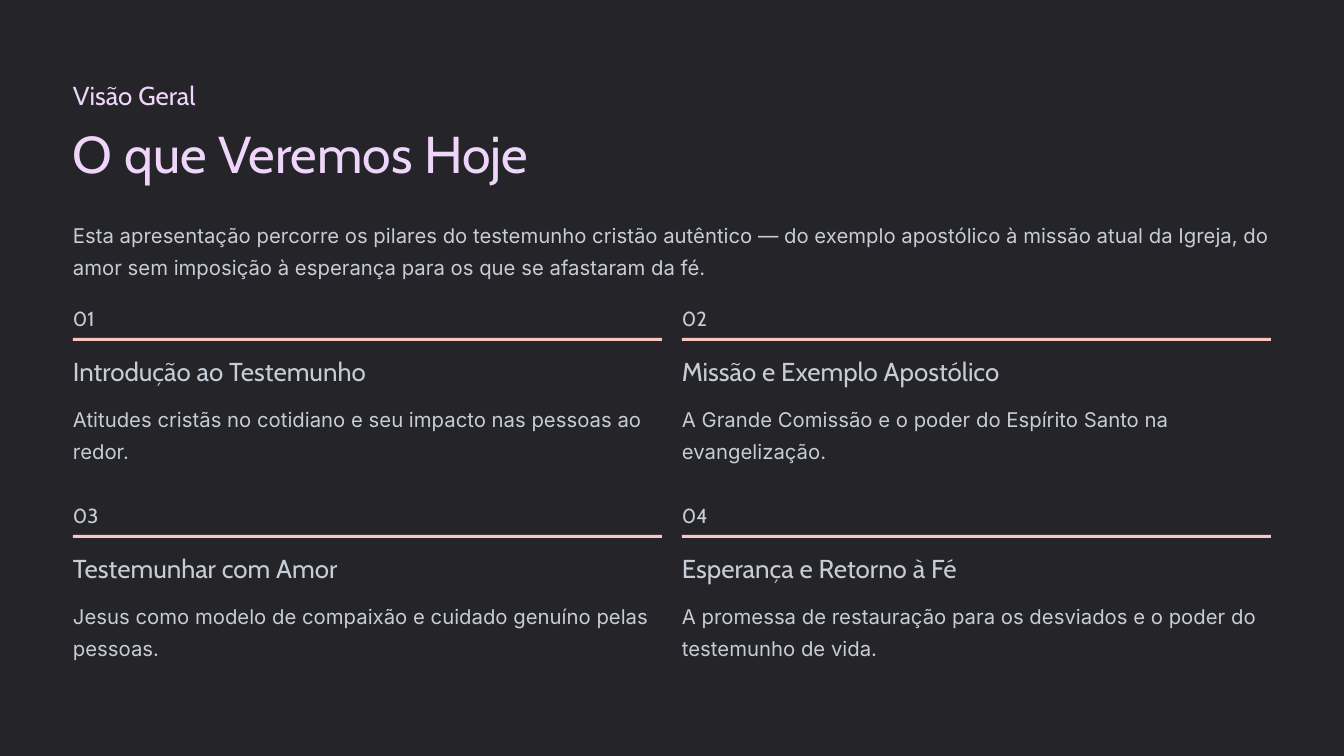
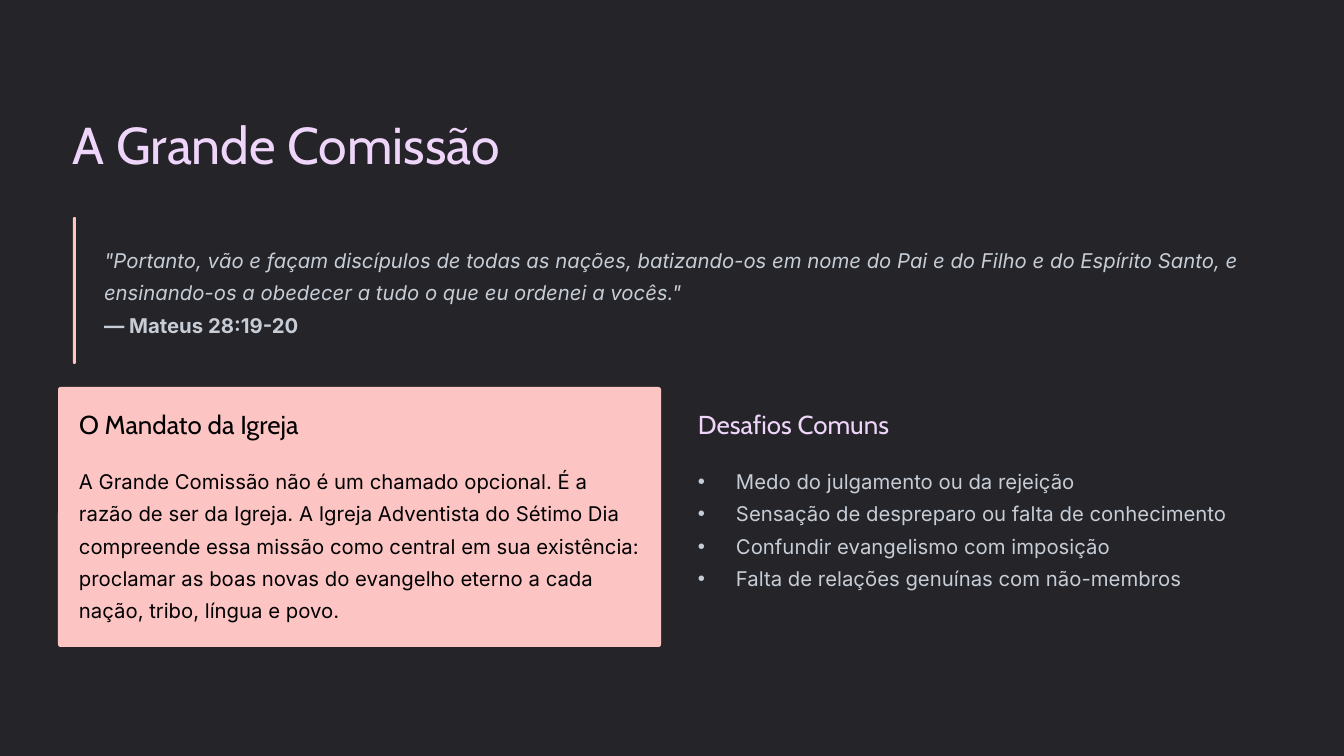
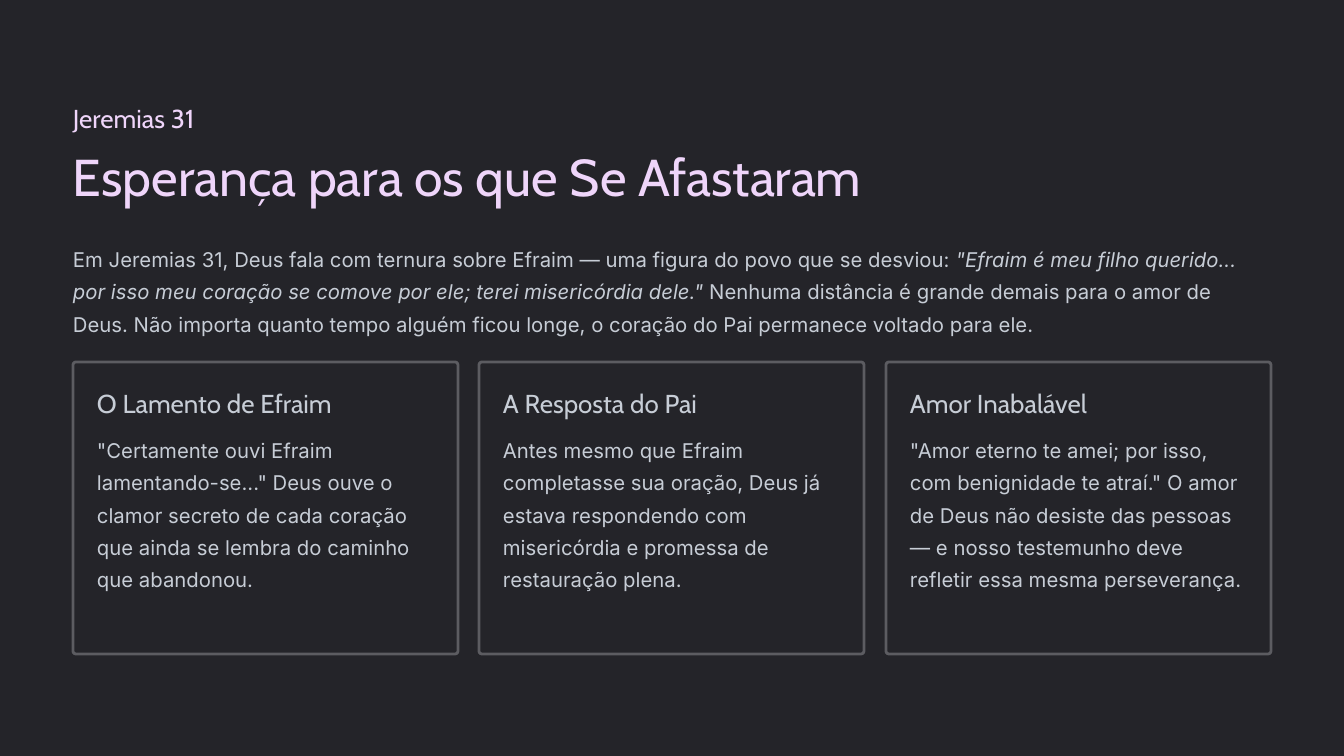
from lxml.etree import SubElement
from pptx import Presentation
from pptx.dml.color import RGBColor
from pptx.enum.shapes import MSO_SHAPE as Preset
from pptx.enum.text import MSO_ANCHOR as Anchor, MSO_AUTO_SIZE as AutoSize, PP_ALIGN as Align
from pptx.oxml.ns import qn
from pptx.util import Pt

PX = 914400 / 100.8
WIDTH, HEIGHT = 1344, 756
LEFT, CONTENT_WIDTH = 73, 1198

# Shared look
BACKGROUND, LILAC, GREY = "242429", "EFD5FA", "C7CDD6"
PINK, OUTLINE, BLACK = "FDC4C4", "5C5C61", "000000"
TITLE = ("Cabin", 37, 1.04)
HEADING = ("Cabin", 18.5, 1.04)
BODY = ("Inter", 14.5, 1.33)
NUMBER = ("Cabin", 14.5, 1.0)

TITLE_AND_BODY, TITLE_ONLY = 1, 5

TOPICS = [
    ("Introdução ao Testemunho",
     "Atitudes cristãs no cotidiano e seu impacto nas pessoas ao redor."),
    ("Missão e Exemplo Apostólico",
     "A Grande Comissão e o poder do Espírito Santo na evangelização."),
    ("Testemunhar com Amor",
     "Jesus como modelo de compaixão e cuidado genuíno pelas pessoas."),
    ("Esperança e Retorno à Fé",
     "A promessa de restauração para os desviados e o poder do testemunho de vida."),
]
CHALLENGES = [
    "Medo do julgamento ou da rejeição",
    "Sensação de despreparo ou falta de conhecimento",
    "Confundir evangelismo com imposição",
    "Falta de relações genuínas com não-membros",
]
CARDS = [
    ("O Lamento de Efraim",
     '"Certamente ouvi Efraim lamentando-se..." Deus ouve o clamor secreto de cada '
     "coração que ainda se lembra do caminho que abandonou."),
    ("A Resposta do Pai",
     "Antes mesmo que Efraim completasse sua oração, Deus já estava respondendo com "
     "misericórdia e promessa de restauração plena."),
    ("Amor Inabalável",
     '"Amor eterno te amei; por isso, com benignidade te atraí." O amor de Deus não '
     "desiste das pessoas — e nosso testemunho deve refletir essa mesma perseverança."),
]


def px(value):
    return round(value * PX)


def rgb(value):
    return RGBColor.from_string(value)


def place(shape, left, top, width, height):
    shape.left, shape.top = px(left), px(top)
    shape.width, shape.height = px(width), px(height)


def add_bullet(paragraph, indent):
    properties = paragraph._p.get_or_add_pPr()
    properties.set("marL", str(px(indent)))
    properties.set("indent", str(-px(indent)))
    SubElement(properties, qn("a:buChar")).set("char", "•")


def write(shape, paragraphs, style, color, anchor=Anchor.TOP, bullet_indent=None):
    """Each paragraph is a string or a list of (text, emphasis) runs."""
    font_name, size, line_spacing = style
    frame = shape.text_frame
    frame.word_wrap = True
    frame.auto_size = AutoSize.NONE
    frame.vertical_anchor = anchor
    frame.margin_left = frame.margin_top = frame.margin_right = frame.margin_bottom = 0
    for index, content in enumerate(paragraphs):
        paragraph = frame.add_paragraph() if index else frame.paragraphs[0]
        paragraph.alignment = Align.LEFT
        paragraph.line_spacing = line_spacing
        paragraph.space_before = Pt(0)
        if bullet_indent:
            add_bullet(paragraph, bullet_indent)
        runs = [(content, "")] if isinstance(content, str) else content
        for text, emphasis in runs:
            run = paragraph.add_run()
            run.text = text
            run.font.name, run.font.size = font_name, Pt(size)
            run.font.color.rgb = rgb(color)
            run.font.bold = emphasis == "bold"
            run.font.italic = emphasis == "italic"


def add_text(slide, box, paragraphs, style=BODY, color=GREY, anchor=Anchor.TOP):
    shape = slide.shapes.add_textbox(*map(px, box))
    write(shape, paragraphs, style, color, anchor)


def add_heading(slide, left, top, text, color=GREY, width=328):
    add_text(slide, (left, top, width, 32), [text], HEADING, color)


def add_block(slide, box, fill, preset=Preset.RECTANGLE, corner=None, outline=None):
    shape = slide.shapes.add_shape(preset, *map(px, box))
    shape.shadow.inherit = False
    shape.fill.solid()
    shape.fill.fore_color.rgb = rgb(fill)
    if corner is not None:
        shape.adjustments[0] = corner
    if outline:
        shape.line.color.rgb = rgb(outline)
        shape.line.width = Pt(2)
    else:
        shape.line.fill.background()


def add_slide(presentation, layout, title, top, width=588):
    slide = presentation.slides.add_slide(presentation.slide_layouts[layout])
    place(slide.shapes.title, LEFT, top, width, 66)
    write(slide.shapes.title, [title], TITLE, LILAC)
    return slide


def add_topic(slide, index, heading, text):
    row, column = divmod(index, 2)
    width = 589
    left = LEFT + column * (CONTENT_WIDTH - width)
    top = 305 + row * 197
    add_text(slide, (left, top, 41, 26), [f"{index + 1:02d}"], NUMBER, anchor=Anchor.MIDDLE)
    add_block(slide, (left, top + 33, width, 3), PINK)
    add_heading(slide, left, top + 49, heading)
    add_text(slide, (left, top + 94, width, 67), [text])


def add_card(slide, index, heading, text):
    width, padding = 385, 24
    left = LEFT + index * (CONTENT_WIDTH - width) // (len(CARDS) - 1)
    add_block(slide, (left, 362, width, 292), BACKGROUND,
              Preset.ROUNDED_RECTANGLE, 0.01, OUTLINE)
    add_heading(slide, left + padding, 386, heading, width=260)
    add_text(slide, (left + padding, 430, 339, 200), [text])


def build_overview(presentation):
    slide = add_slide(presentation, TITLE_ONLY, "O que Veremos Hoje", 119)
    add_heading(slide, LEFT, 78, "Visão Geral", LILAC)
    add_text(slide, (LEFT, 215, CONTENT_WIDTH, 67), [
        "Esta apresentação percorre os pilares do testemunho cristão autêntico — do "
        "exemplo apostólico à missão atual da Igreja, do amor sem imposição à esperança "
        "para os que se afastaram da fé."])
    for index, (heading, text) in enumerate(TOPICS):
        add_topic(slide, index, heading, text)


def build_commission(presentation):
    slide = add_slide(presentation, TITLE_AND_BODY, "A Grande Comissão", 110)

    # Quotation with a side bar
    add_block(slide, (LEFT, 217, 3, 147), PINK, Preset.ROUNDED_RECTANGLE, 0.5)
    add_text(slide, (104, 240, 1167, 100), [
        [('"Portanto, vão e façam discípulos de todas as nações, batizando-os em nome do '
          "Pai e do Filho e do Espírito Santo, e ensinando-os a obedecer a tudo o que eu "
          'ordenei a vocês."', "italic")],
        [("— Mateus 28:19-20", "bold")]])

    # Mandate panel
    add_block(slide, (58, 387, 603, 260), PINK, Preset.ROUNDED_RECTANGLE, 0.01)
    add_heading(slide, 79, 407, "O Mandato da Igreja", BLACK)
    add_text(slide, (79, 461, 562, 166), [
        "A Grande Comissão não é um chamado opcional. É a razão de ser da Igreja. A Igreja "
        "Adventista do Sétimo Dia compreende essa missão como central em sua existência: "
        "proclamar as boas novas do evangelho eterno a cada nação, tribo, língua e povo."],
        color=BLACK)

    # Challenges list
    add_heading(slide, 698, 407, "Desafios Comuns", LILAC)
    challenge_list = slide.placeholders[1]
    place(challenge_list, 698, 461, 573, 155)
    write(challenge_list, CHALLENGES, BODY, GREY, bullet_indent=38)


def build_hope(presentation):
    slide = add_slide(presentation, TITLE_ONLY, "Esperança para os que Se Afastaram", 142, 942)
    add_heading(slide, LEFT, 101, "Jeremias 31", LILAC)
    add_text(slide, (LEFT, 239, CONTENT_WIDTH, 100), [[
        ("Em Jeremias 31, Deus fala com ternura sobre Efraim — uma figura do povo que se "
         "desviou: ", ""),
        ('"Efraim é meu filho querido... por isso meu coração se comove por ele; terei '
         'misericórdia dele."', "italic"),
        (" Nenhuma distância é grande demais para o amor de Deus. Não importa quanto tempo "
         "alguém ficou longe, o coração do Pai permanece voltado para ele.", "")]])
    for index, (heading, text) in enumerate(CARDS):
        add_card(slide, index, heading, text)


def main():
    presentation = Presentation()
    presentation.slide_width, presentation.slide_height = px(WIDTH), px(HEIGHT)
    background = presentation.slide_master.background.fill
    background.solid()
    background.fore_color.rgb = rgb(BACKGROUND)
    build_overview(presentation)
    build_commission(presentation)
    build_hope(presentation)
    presentation.save("out.pptx")


if __name__ == "__main__":
    main()
